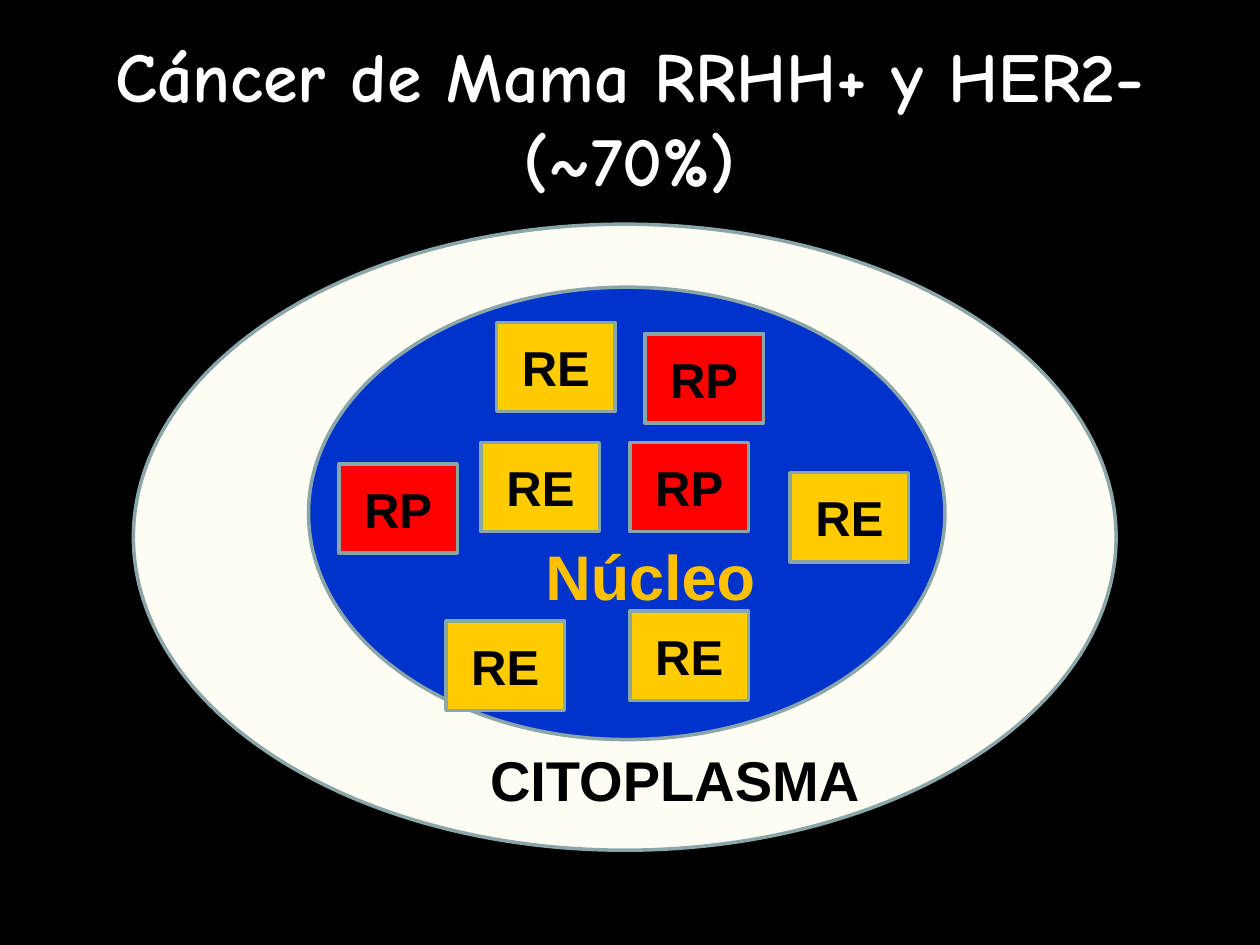
"""Draw the hormone receptors inside a breast cancer cell on one slide."""
from dataclasses import dataclass

from pptx import Presentation
from pptx.dml.color import RGBColor
from pptx.enum.shapes import MSO_SHAPE
from pptx.enum.text import MSO_ANCHOR, PP_ALIGN
from pptx.util import Cm, Pt


@dataclass(frozen=True)
class Theme:
    background: str = "000000"
    heading: str = "FFFFFF"
    cytoplasm: str = "FFFCF3"
    nucleus: str = "0033CC"
    nucleus_label: str = "FFC000"
    estrogen: str = "FFCC00"
    progesterone: str = "FF0000"
    ink: str = "000000"
    outline: str = "8AA6A8"
    outline_width: float = 2
    heading_font: str = "Comic Neue"
    body_font: str = "Arial"
    heading_size: int = 40
    nucleus_size: int = 36
    cytoplasm_size: int = 32
    receptor_size: int = 28


class CellSlide:
    def __init__(self, slide, theme):
        self.slide = slide
        self.theme = theme
        fill = slide.background.fill
        fill.solid()
        fill.fore_color.rgb = RGBColor.from_string(theme.background)

    def style_text(self, frame, text, size, color, font, anchor):
        frame.word_wrap = True
        frame.vertical_anchor = anchor
        frame.text = text
        for paragraph in frame.paragraphs:
            paragraph.alignment = PP_ALIGN.CENTER
            for run in paragraph.runs:
                run.font.name = font
                run.font.size = Pt(size)
                run.font.bold = True
                run.font.color.rgb = RGBColor.from_string(color)

    def label(self, text, bounds, size, color, font=None, anchor=MSO_ANCHOR.TOP):
        box = self.slide.shapes.add_textbox(*map(Cm, bounds))
        self.style_text(box.text_frame, text, size, color, font or self.theme.body_font, anchor)

    def outlined(self, preset, bounds, color):
        shape = self.slide.shapes.add_shape(preset, *map(Cm, bounds))
        shape.shadow.inherit = False
        shape.fill.solid()
        shape.fill.fore_color.rgb = RGBColor.from_string(color)
        shape.line.color.rgb = RGBColor.from_string(self.theme.outline)
        shape.line.width = Pt(self.theme.outline_width)
        return shape

    def compartment(self, bounds, color):
        self.outlined(MSO_SHAPE.OVAL, bounds, color)

    def receptor(self, name, left, top, color):
        square = self.outlined(MSO_SHAPE.RECTANGLE, (left, top, 2.39, 1.8), color)
        self.style_text(square.text_frame, name, self.theme.receptor_size, self.theme.ink,
                        self.theme.body_font, MSO_ANCHOR.MIDDLE)


def main():
    theme = Theme()
    presentation = Presentation()
    presentation.slide_width, presentation.slide_height = Cm(25.4), Cm(19.05)
    cell = CellSlide(presentation.slides.add_slide(presentation.slide_layouts[6]), theme)

    cell.label("Cáncer de Mama RRHH+ y HER2-\v(~70%)", (0.3, 0.76, 24.79, 3.18),
               theme.heading_size, theme.heading, theme.heading_font, MSO_ANCHOR.MIDDLE)
    cell.compartment((2.69, 4.52, 19.81, 12.62), theme.cytoplasm)
    cell.compartment((6.22, 5.79, 12.83, 9.12), theme.nucleus)
    cell.label("Núcleo", (9.91, 10.72, 6.4, 1.8), theme.nucleus_size, theme.nucleus_label)
    cell.label("CITOPLASMA", (9.3, 14.91, 8.61, 1.63), theme.cytoplasm_size, theme.ink)

    receptor_colors = {"RE": theme.estrogen, "RP": theme.progesterone}
    receptor_places = {
        "RE": [(10.01, 6.5), (9.7, 8.92), (15.93, 9.53), (8.99, 12.52), (12.7, 12.32)],
        "RP": [(13, 6.73), (12.7, 8.92), (6.83, 9.35)],
    }
    for name, places in receptor_places.items():
        for left, top in places:
            cell.receptor(name, left, top, receptor_colors[name])

    presentation.save("out.pptx")


if __name__ == "__main__":
    main()
